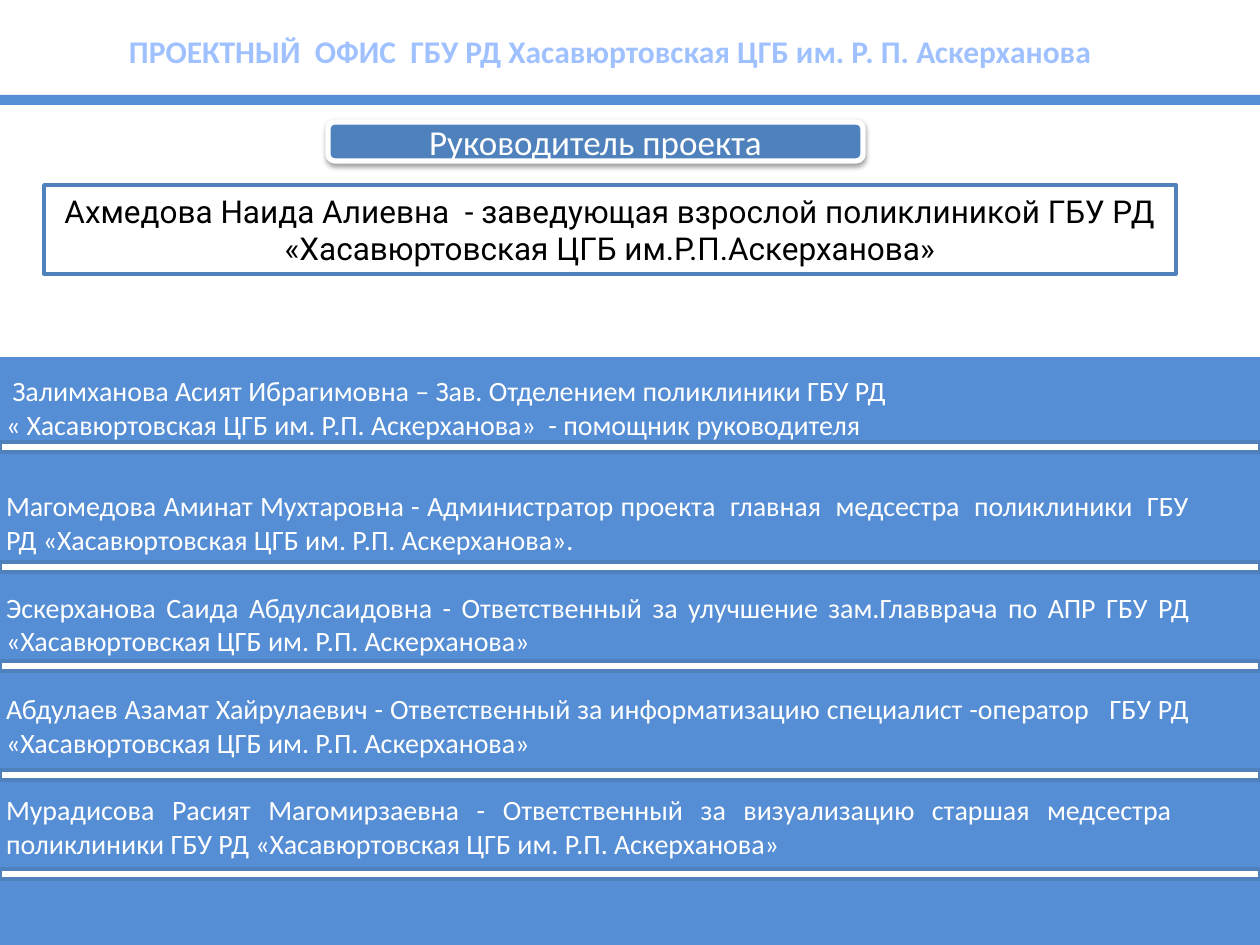
from lxml import etree
from pptx import Presentation
from pptx.dml.color import RGBColor
from pptx.enum.shapes import MSO_SHAPE
from pptx.enum.text import MSO_ANCHOR, PP_ALIGN
from pptx.oxml import parse_xml
from pptx.oxml.ns import nsdecls, qn
from pptx.util import Emu, Pt

RECTANGLE, ROUNDED = MSO_SHAPE.RECTANGLE, MSO_SHAPE.ROUNDED_RECTANGLE
TOP, MIDDLE = MSO_ANCHOR.TOP, MSO_ANCHOR.MIDDLE
LEFT, CENTER, JUSTIFY = PP_ALIGN.LEFT, PP_ALIGN.CENTER, PP_ALIGN.JUSTIFY

# Content
TITLE = "ПРОЕКТНЫЙ  ОФИС  ГБУ РД Хасавюртовская ЦГБ им. Р. П. Аскерханова"
ROLE = "Руководитель проекта"
LEADER = ("Ахмедова Наида Алиевна  - заведующая взрослой поликлиникой ГБУ РД "
          "«Хасавюртовская ЦГБ им.Р.П.Аскерханова»")
ASSISTANT = [
    " Залимханова Асият Ибрагимовна – Зав. Отделением поликлиники ГБУ РД",
    "« Хасавюртовская ЦГБ им. Р.П. Аскерханова»  - помощник руководителя",
]
MEMBERS = [
    "Магомедова Аминат Мухтаровна - Администратор проекта  главная  медсестра  "
    "поликлиники  ГБУ РД «Хасавюртовская ЦГБ им. Р.П. Аскерханова».",
    "Эскерханова Саида Абдулсаидовна - Ответственный за улучшение зам.Главврача "
    "по АПР ГБУ РД «Хасавюртовская ЦГБ им. Р.П. Аскерханова»",
    "Абдулаев Азамат Хайрулаевич - Ответственный за информатизацию специалист "
    "-оператор   ГБУ РД «Хасавюртовская ЦГБ им. Р.П. Аскерханова»",
    "Мурадисова Расият Магомирзаевна - Ответственный за визуализацию старшая "
    "медсестра  поликлиники ГБУ РД «Хасавюртовская ЦГБ им. Р.П. Аскерханова»",
]

# Layout and colours
PX = 914400 // 126
WIDTH, HEIGHT, INSET = 1260, 945, 6
DIVIDER_TOPS = [442, 562, 661, 770, 869]
MEMBER_GAP = 19.5
WHITE, BLACK, SKY, BLUE, PALE = "FFFFFF", "000000", "558ED5", "4F81BD", "A0C1FF"
BODY = {"name": "Calibri", "size": Pt(16), "bold": False}


def color(value):
    return RGBColor.from_string(value)


def px(*values):
    return [Emu(value * PX) for value in values]


def add_box(slide, box, fill, line=None, line_width=2, kind=RECTANGLE):
    shape = slide.shapes.add_shape(kind, *px(*box))
    shape.shadow.inherit = False
    shape.fill.solid()
    shape.fill.fore_color.rgb = color(fill)
    if line:
        shape.line.color.rgb = color(line)
        shape.line.width = Pt(line_width)
    else:
        shape.line.fill.background()
    return shape


def write(shape, lines, font, text_color, align=JUSTIFY, anchor=TOP, wrap=True, gap=0):
    frame = shape.text_frame
    margin, = px(INSET)
    settings = {"word_wrap": wrap, "vertical_anchor": anchor, "margin_left": margin,
                "margin_right": margin, "margin_top": margin, "margin_bottom": margin}
    for name, value in settings.items():
        setattr(frame, name, value)
    for index, line in enumerate(lines):
        paragraph = frame.paragraphs[0] if index == 0 else frame.add_paragraph()
        paragraph.alignment = align
        paragraph.space_before = Pt(gap if index else 0)
        run = paragraph.add_run()
        run.text = line
        for name, value in font.items():
            setattr(run.font, name, value)
        run.font.color.rgb = color(text_color)


def add_text(slide, box, lines, font, text_color, **options):
    write(slide.shapes.add_textbox(*px(*box)), lines, font, text_color, **options)


def add_shadow(shape):
    effects = shape._element.spPr.find(qn("a:effectLst"))
    shadow = parse_xml(
        f'<a:outerShdw {nsdecls("a")} blurRad="{Pt(3)}" dist="{Pt(1.6)}" dir="5400000" '
        'rotWithShape="0"/>')
    tint = etree.SubElement(shadow, qn("a:srgbClr"), val=BLACK)
    etree.SubElement(tint, qn("a:alpha"), val="38000")
    effects.append(shadow)


def main():
    presentation = Presentation()
    presentation.slide_width, presentation.slide_height = px(WIDTH, HEIGHT)
    slide = presentation.slides.add_slide(presentation.slide_layouts[6])

    # Background panel and header stripe
    add_box(slide, (0, 357, WIDTH, 588), SKY)
    add_box(slide, (-30, 95, 1324, 10), SKY)

    # Project leader
    badge = add_box(slide, (328, 122, 535, 39), BLUE, WHITE, 3, ROUNDED)
    badge.adjustments[0] = 0.17
    add_shadow(badge)
    write(badge, [ROLE], {**BODY, "size": Pt(20)}, WHITE, align=CENTER, anchor=MIDDLE)
    leader = add_box(slide, (44, 185, 1132, 89), WHITE, BLUE)
    write(leader, [LEADER], {"name": "Roboto", "size": Pt(18)}, BLACK,
          align=CENTER, anchor=MIDDLE)

    # Team
    add_text(slide, (0, 368, 1206, 81), ASSISTANT, BODY, WHITE)
    add_text(slide, (0, 483, 1196, 425), MEMBERS, BODY, WHITE, gap=MEMBER_GAP)
    for top in DIVIDER_TOPS:
        add_box(slide, (0, top, WIDTH, 10), WHITE, BLUE)

    # Title
    add_text(slide, (123, 26, 993, 89), [TITLE], {**BODY, "size": Pt(18), "bold": True},
             PALE, align=LEFT, wrap=False)

    presentation.save("out.pptx")


if __name__ == "__main__":
    main()
